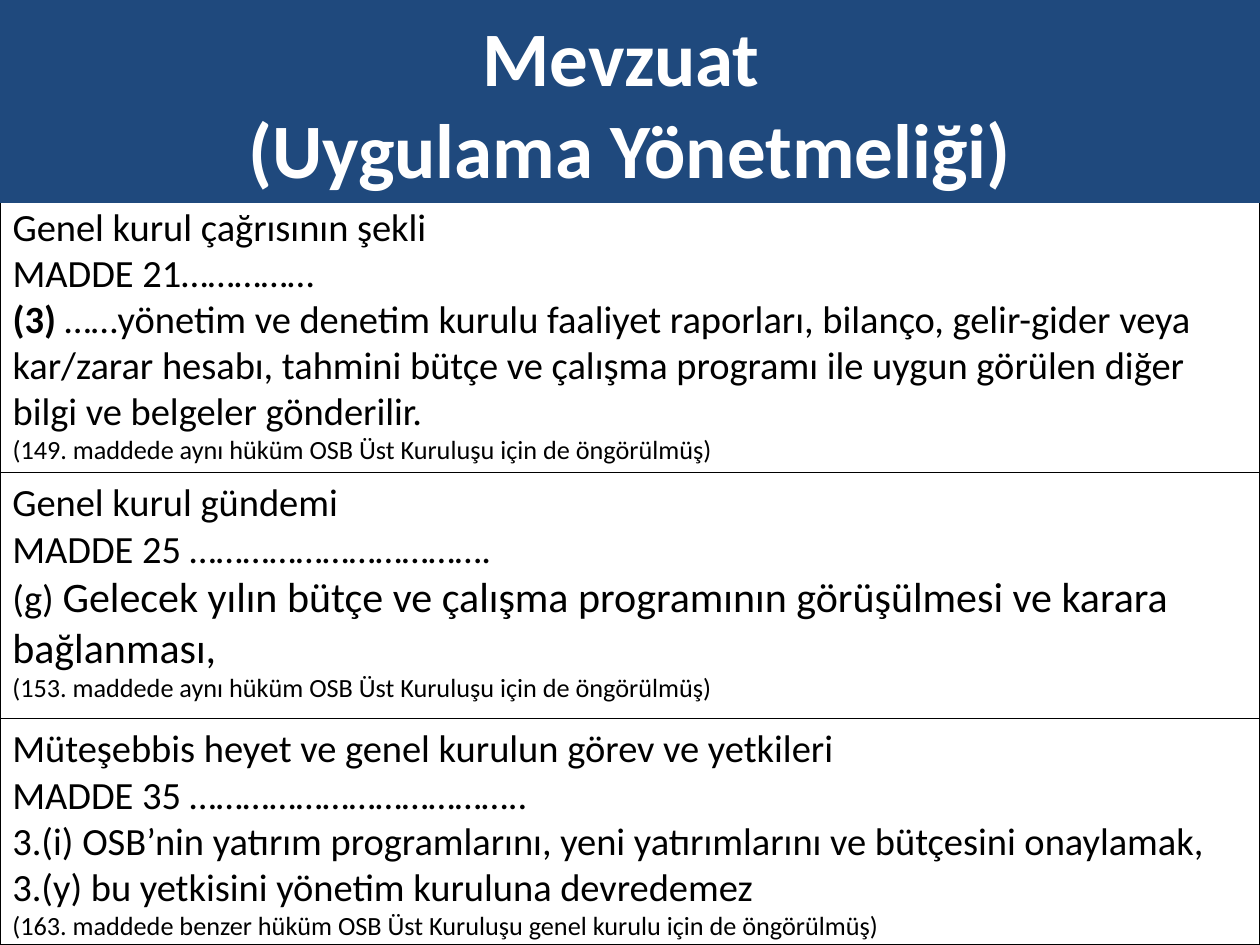
from pptx import Presentation
from pptx import util as u
from pptx.dml import color
from pptx.enum import text

FONT = "Calibri"
BODY, NOTE = 22, 15
WIDTH, HEIGHT = 25.4, 19.05
TITLE_HEIGHT = 4.09
TITLE_LINES = [[("Mevzuat ", 44, True)], [("(Uygulama Yönetmeliği)", 44, True)]]

ARTICLES = [
    (3.96, [
        [("Genel kurul çağrısının şekli", BODY, False)],
        [("MADDE 21……………", BODY, False)],
        [("(3)", BODY, True),
         (" ……yönetim ve denetim kurulu faaliyet raporları, bilanço, gelir-gider veya "
          "kar/zarar hesabı, tahmini bütçe ve çalışma programı ile uygun görülen diğer "
          "bilgi ve belgeler gönderilir.", BODY, False)],
        [("(149. maddede aynı hüküm OSB Üst Kuruluşu için de öngörülmüş)", NOTE, False)],
    ]),
    (9.52, [
        [("Genel kurul gündemi", BODY, False)],
        [("MADDE 25 …………………………….", BODY, False)],
        [("(g) ", BODY, False),
         ("Gelecek yılın bütçe ve çalışma programının görüşülmesi ve karara bağlanması,",
          24, False)],
        [("(153. maddede aynı hüküm OSB Üst Kuruluşu için de öngörülmüş)", NOTE, False)],
    ]),
    (14.48, [
        [("Müteşebbis heyet ve genel kurulun görev ve yetkileri", BODY, False)],
        [("MADDE 35 ………………………………..", BODY, False)],
        [("3.(i) OSB’nin yatırım programlarını, yeni yatırımlarını ve bütçesini onaylamak,",
          BODY, False)],
        [("3.(y) bu yetkisini yönetim kuruluna devredemez", BODY, False)],
        [("(163. maddede benzer hüküm OSB Üst Kuruluşu genel kurulu için de öngörülmüş)",
          NOTE, False)],
    ]),
]


def paint(target, hex_color):
    target.solid()
    target.fore_color.rgb = color.RGBColor.from_string(hex_color)


def place(box, top, height):
    box.left, box.top = u.Cm(0), u.Cm(top)
    box.width, box.height = u.Cm(WIDTH), u.Cm(height)


def write(box, lines, hex_color, align, anchor):
    frame = box.text_frame
    frame.word_wrap = True
    frame.auto_size = text.MSO_AUTO_SIZE.NONE
    frame.vertical_anchor = anchor
    for index, line in enumerate(lines):
        para = frame.add_paragraph() if index else frame.paragraphs[0]
        para.alignment = align
        para.space_before = u.Pt(0)
        for words, size, bold in line:
            span = para.add_run()
            span.text = words
            span.font.name = FONT
            span.font.size = u.Pt(size)
            span.font.bold = bold
            paint(span.font.fill, hex_color)


def main():
    deck = Presentation()
    deck.slide_width, deck.slide_height = u.Cm(WIDTH), u.Cm(HEIGHT)
    page = deck.slides.add_slide(deck.slide_layouts[0])
    title, subtitle = page.shapes.title, page.placeholders[1]

    subtitle.element.addnext(title.element)
    place(title, 0, TITLE_HEIGHT)
    paint(title.fill, "1F497D")
    write(title, TITLE_LINES, "FFFFFF", text.PP_ALIGN.CENTER, text.MSO_ANCHOR.MIDDLE)

    bottoms = [top for top, _ in ARTICLES[1:]] + [HEIGHT]
    for index, ((top, lines), bottom) in enumerate(zip(ARTICLES, bottoms)):
        box = page.shapes.add_textbox(0, 0, 0, 0) if index else subtitle
        place(box, top, bottom - top)
        paint(box.line.fill, "000000")
        box.line.width = u.Pt(0.75)
        write(box, lines, "000000", text.PP_ALIGN.LEFT, text.MSO_ANCHOR.TOP)

    deck.save("out.pptx")


if __name__ == "__main__":
    main()
